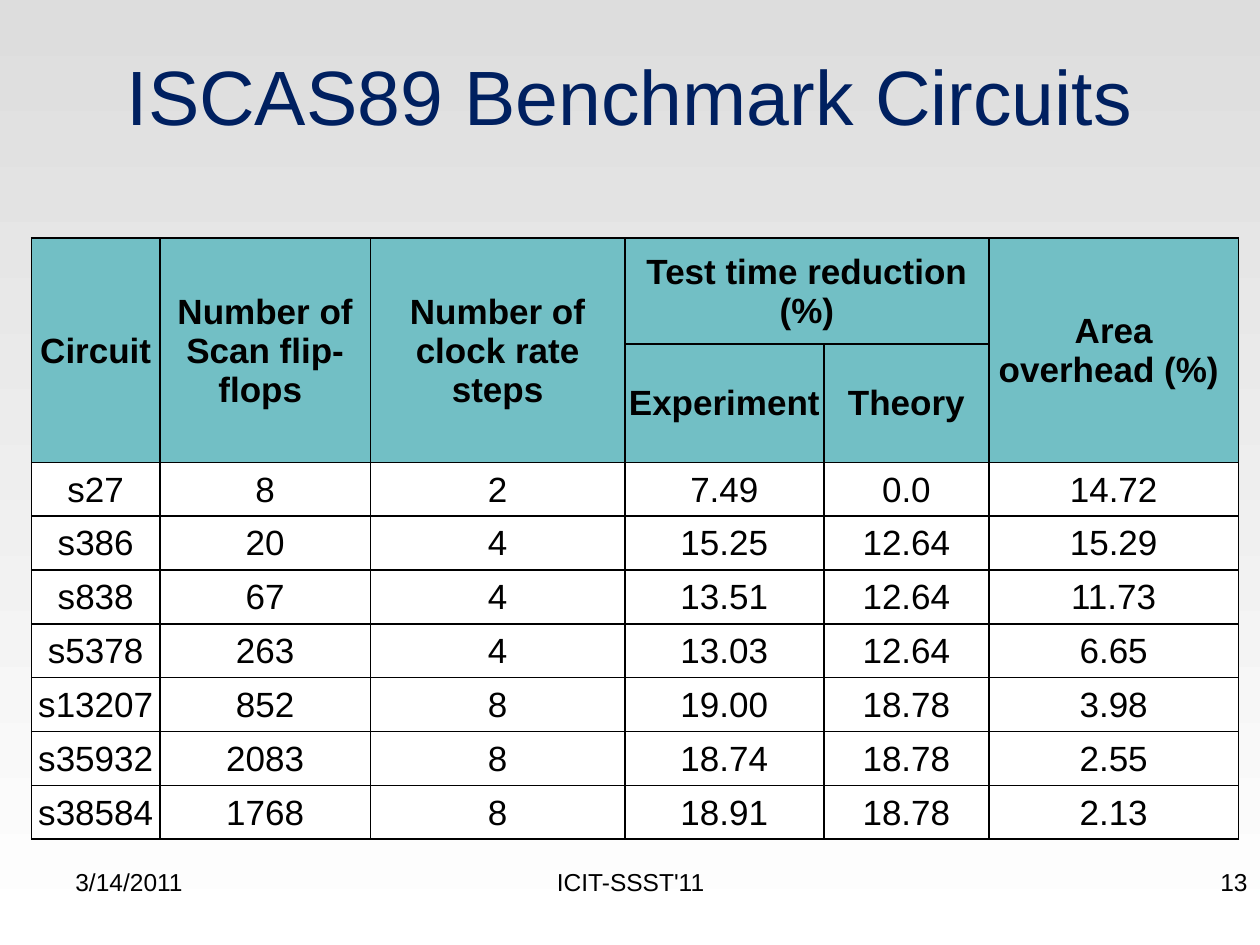
from dataclasses import dataclass
from typing import NamedTuple

from lxml.etree import fromstring
from pptx import Presentation
from pptx.dml.color import RGBColor
from pptx.enum.text import MSO_ANCHOR, PP_ALIGN
from pptx.oxml.ns import nsdecls
from pptx.slide import Slide
from pptx.table import Table, _Cell
from pptx.text.text import TextFrame
from pptx.util import Inches, Pt


@dataclass(frozen=True)
class Theme:
    """Colours, type sizes and line width of the slide."""
    font: str = "Arial"
    ink: str = "000000"
    navy: str = "002060"
    teal: str = "72BFC5"
    white: str = "FFFFFF"
    grey: str = "DDDDDD"
    title: int = 44
    body: int = 20
    foot: int = 14
    rule: int = 1


class Label(NamedTuple):
    """A text box, placed in percent of the slide's size."""
    text: str
    left: float
    top: float
    width: float
    height: float
    align: PP_ALIGN
    size: int
    color: str
    anchor: MSO_ANCHOR = MSO_ANCHOR.TOP


class Head(NamedTuple):
    """A header cell with its grid place and span."""
    text: str
    row: int
    col: int
    rows: int = 1
    cols: int = 1


THEME = Theme()
WIDE, HIGH = Inches(10), Inches(7.5)
FOOT, DEPTH = 91.1, 6.9
LABELS = [
    Label("3/14/2011", 5, FOOT, 23.3, DEPTH, PP_ALIGN.LEFT, THEME.foot, THEME.ink),
    Label("ICIT-SSST'11", 34.2, FOOT, 31.7, DEPTH, PP_ALIGN.CENTER, THEME.foot, THEME.ink),
    Label("13", 76.7, FOOT, 23.3, DEPTH, PP_ALIGN.RIGHT, THEME.foot, THEME.ink),
    Label("ISCAS89 Benchmark Circuits", 5, 5, 90, 10, PP_ALIGN.CENTER,
          THEME.title, THEME.navy, MSO_ANCHOR.MIDDLE),
]
HEADS = [
    Head("Circuit", 0, 0, rows=2),
    Head("Number of\nScan flip-flops ", 0, 1, rows=2),
    Head("Number of clock rate steps", 0, 2, rows=2),
    Head("Test time reduction (%)", 0, 3, cols=2),
    Head("Area\noverhead (%) ", 0, 5, rows=2),
    Head("Experiment", 1, 3),
    Head("Theory", 1, 4),
]
DATA = [
    ("s27", "8", "2", "7.49", "0.0", "14.72"),
    ("s386", "20", "4", "15.25", "12.64", "15.29"),
    ("s838", "67", "4", "13.51", "12.64", "11.73"),
    ("s5378", "263", "4", "13.03", "12.64", "6.65"),
    ("s13207", "852", "8", "19.00", "18.78", "3.98"),
    ("s35932", "2083", "8", "18.74", "18.78", "2.55"),
    ("s38584", "1768", "8", "18.91", "18.78", "2.13"),
]
TIERS = 2
COLS = [10.2, 16.7, 20.2, 15.8, 13.1, 19.8]
ROWS = [11.2] + [5.7] * (TIERS - 1 + len(DATA))


def across(share: float) -> int:
    """Turn a percentage of the slide's width into a length."""
    return round(WIDE * share / 100)


def down(share: float) -> int:
    """Turn a percentage of the slide's height into a length."""
    return round(HIGH * share / 100)


def write(frame: TextFrame, text: str, size: int, color: str,
          align: PP_ALIGN, bold: bool = False) -> None:
    """Fill a text frame with evenly styled paragraphs."""
    frame.text = text
    for para in frame.paragraphs:
        para.alignment = align
        para.font.name = THEME.font
        para.font.size = Pt(size)
        para.font.bold = bold
        para.font.color.rgb = RGBColor.from_string(color)


def paint(slide: Slide) -> None:
    """Give the slide its vertical grey gradient."""
    fill = slide.background.fill
    fill.gradient()
    fill.gradient_angle = 270
    for stop, color, place in zip(fill.gradient_stops, (THEME.grey, THEME.white), (0, 1)):
        stop.color.rgb = RGBColor.from_string(color)
        stop.position = place


def put_label(slide: Slide, label: Label) -> None:
    """Draw one text box."""
    box = slide.shapes.add_textbox(across(label.left), down(label.top),
                                   across(label.width), down(label.height))
    frame = box.text_frame
    frame.word_wrap = True
    frame.vertical_anchor = label.anchor
    write(frame, label.text, label.size, label.color, label.align)


def dress(cell: _Cell, color: str) -> None:
    """Set the fill, margins and borders of a cell."""
    cell.vertical_anchor = MSO_ANCHOR.MIDDLE
    cell.margin_left = cell.margin_right = cell.margin_top = Inches(0.01)
    cell.margin_bottom = 0
    cell.fill.solid()
    cell.fill.fore_color.rgb = RGBColor.from_string(color)
    props = cell._tc.get_or_add_tcPr()
    for spot, side in enumerate("LRTB"):
        props.insert(spot, fromstring(
            f'<a:ln{side} {nsdecls("a")} w="{Pt(THEME.rule)}"><a:solidFill>'
            f'<a:srgbClr val="{THEME.ink}"/></a:solidFill></a:ln{side}>'))


def fill_cell(cell: _Cell, text: str, bold: bool = False) -> None:
    """Write centred text into a cell."""
    write(cell.text_frame, text, THEME.body, THEME.ink, PP_ALIGN.CENTER, bold)


def put_head(table: Table, head: Head) -> None:
    """Merge and label one header cell."""
    cell = table.cell(head.row, head.col)
    if head.rows * head.cols > 1:
        cell.merge(table.cell(head.row + head.rows - 1, head.col + head.cols - 1))
    fill_cell(cell, head.text, bold=True)


def put_table(slide: Slide) -> None:
    """Draw the table of benchmark results."""
    table = slide.shapes.add_table(len(ROWS), len(COLS), across(2.5), down(25.2),
                                   across(sum(COLS)), down(sum(ROWS))).table
    table.first_row = table.horz_banding = False
    for col, share in zip(table.columns, COLS):
        col.width = across(share)
    for i, (row, share) in enumerate(zip(table.rows, ROWS)):
        row.height = down(share)
        for cell in row.cells:
            dress(cell, THEME.teal if i < TIERS else THEME.white)
    for head in HEADS:
        put_head(table, head)
    for i, line in enumerate(DATA, TIERS):
        for j, text in enumerate(line):
            fill_cell(table.cell(i, j), text)


def main() -> None:
    """Build and save the slide."""
    deck = Presentation()
    deck.slide_width, deck.slide_height = WIDE, HIGH
    slide = deck.slides.add_slide(deck.slide_layouts[6])
    paint(slide)
    put_table(slide)
    for label in LABELS:
        put_label(slide, label)
    deck.save("out.pptx")


if __name__ == "__main__":
    main()
